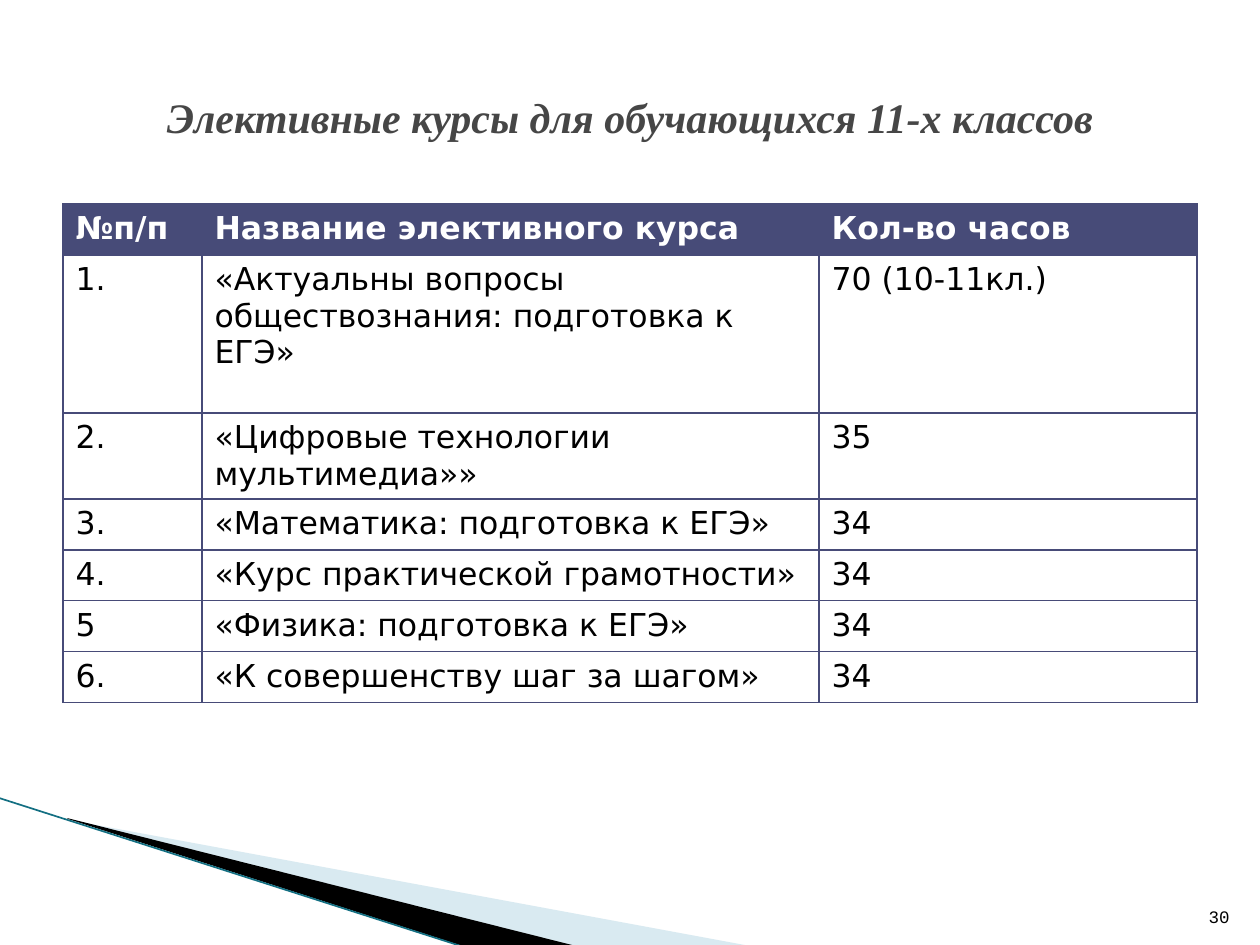
import pptx
import pptx.dml.color
import pptx.enum.text
import pptx.oxml.ns
import pptx.util
from lxml import etree

EMU_PER_PX = 914400 / 126
INDIGO = "474B78"
COLUMN_WIDTHS = (139, 617, 378)
ROW_HEIGHTS = (51, 158, 86, 51, 51, 51, 51)
COURSES = (
    ("№п/п", "Название элективного курса", "Кол-во часов"),
    ("1.", "«Актуальны вопросы обществознания: подготовка к ЕГЭ»", "70 (10-11кл.)"),
    ("2.", "«Цифровые технологии мультимедиа»»", "35"),
    ("3.", "«Математика: подготовка к ЕГЭ»", "34"),
    ("4.", "«Курс практической грамотности»", "34"),
    ("5", "«Физика: подготовка к ЕГЭ»", "34"),
    ("6.", "«К совершенству шаг за шагом»", "34"),
)


def px(value):
    return pptx.util.Emu(round(value * EMU_PER_PX))


def color(hex_string):
    return pptx.dml.color.RGBColor.from_string(hex_string)


def add_element(parent, tag, **attributes):
    return etree.SubElement(parent, pptx.oxml.ns.qn(tag), attributes)


def add_run(paragraph, text, font_name, size, text_color, bold=False, italic=False):
    run = paragraph.add_run()
    run.text = text
    run.font.name = font_name
    run.font.size = pptx.util.Pt(size)
    run.font.color.rgb = color(text_color)
    run.font.bold = bold
    run.font.italic = italic


def add_polygon(slide, points, fill_color, opacity=100):
    builder = slide.shapes.build_freeform(*points[0], scale=EMU_PER_PX)
    builder.add_line_segments(points[1:], close=True)
    shape = builder.convert_to_shape()
    shape.shadow.inherit = False
    shape.fill.solid()
    shape.fill.fore_color.rgb = color(fill_color)
    shape.line.fill.background()
    if opacity < 100:
        fill = shape.element.spPr.find(".//" + pptx.oxml.ns.qn("a:srgbClr"))
        add_element(fill, "a:alpha", val=str(opacity * 1000))


def add_line(slide, start, end, line_color, width):
    connector = slide.shapes.add_connector(
        pptx.enum.shapes.MSO_CONNECTOR.STRAIGHT, *map(px, start + end))
    connector.line.color.rgb = color(line_color)
    connector.line.width = pptx.util.Pt(width)
    add_element(connector.element.spPr, "a:effectLst")


def set_borders(cell, border_color, width):
    properties = cell._tc.get_or_add_tcPr()
    for side in ("a:lnL", "a:lnR", "a:lnT", "a:lnB"):
        line = add_element(properties, side, w=str(pptx.util.Pt(width)))
        fill = add_element(line, "a:solidFill")
        add_element(fill, "a:srgbClr", val=border_color)


def fill_cell(cell, text, is_header, is_number):
    set_borders(cell, INDIGO, 0.75)
    if is_header:
        cell.fill.solid()
        cell.fill.fore_color.rgb = color(INDIGO)
    else:
        cell.fill.background()
    paragraph = cell.text_frame.paragraphs[0]
    # Hanging indent for the row numbers
    if is_number and not is_header:
        properties = paragraph._p.get_or_add_pPr()
        properties.set("marL", str(px(48)))
        properties.set("indent", str(px(-48)))
    add_run(paragraph, text, "DejaVu Sans", 18,
            "FFFFFF" if is_header else "000000", bold=is_header)


def add_course_table(slide):
    frame = slide.shapes.add_table(
        len(COURSES), len(COLUMN_WIDTHS), px(63), px(204),
        px(sum(COLUMN_WIDTHS)), px(sum(ROW_HEIGHTS)))
    table = frame.table
    table.horz_banding = False
    for column, width in zip(table.columns, COLUMN_WIDTHS):
        column.width = px(width)
    for row_index, texts in enumerate(COURSES):
        table.rows[row_index].height = px(ROW_HEIGHTS[row_index])
        for column_index, text in enumerate(texts):
            fill_cell(table.cell(row_index, column_index), text,
                      row_index == 0, column_index == 0)


def set_title(slide, text):
    title = slide.shapes.title
    title.left, title.top, title.width, title.height = map(px, (63, 38, 1134, 158))
    title.text_frame.vertical_anchor = pptx.enum.text.MSO_ANCHOR.MIDDLE
    paragraph = title.text_frame.paragraphs[0]
    paragraph.alignment = pptx.enum.text.PP_ALIGN.CENTER
    add_run(paragraph, text, "Times New Roman", 24, "464646", bold=True, italic=True)


def add_page_number(slide, text):
    box = slide.shapes.add_textbox(*map(px, (1192, 883, 50, 50)))
    box.text_frame.word_wrap = True
    box.text_frame.vertical_anchor = pptx.enum.text.MSO_ANCHOR.BOTTOM
    paragraph = box.text_frame.paragraphs[0]
    paragraph.alignment = pptx.enum.text.PP_ALIGN.RIGHT
    add_run(paragraph, text, "Courier New", 10, "000000")


def main():
    presentation = pptx.Presentation()
    presentation.slide_width = px(1260)
    presentation.slide_height = px(945)
    slide = presentation.slides.add_slide(presentation.slide_layouts[5])

    # Corner decoration
    add_polygon(slide, ((69, 820), (750, 946), (575, 946), (69, 819)), "A0CBDC", 40)
    add_polygon(slide, ((67, 818), (576, 946), (469, 948), (68, 819)), "000000")
    add_line(slide, (-1, 798), (467, 948), "136F82", 0.95)

    # Content
    add_course_table(slide)
    set_title(slide, "Элективные курсы для обучающихся 11-х классов")
    add_page_number(slide, "30")

    presentation.save("out.pptx")


if __name__ == "__main__":
    main()
